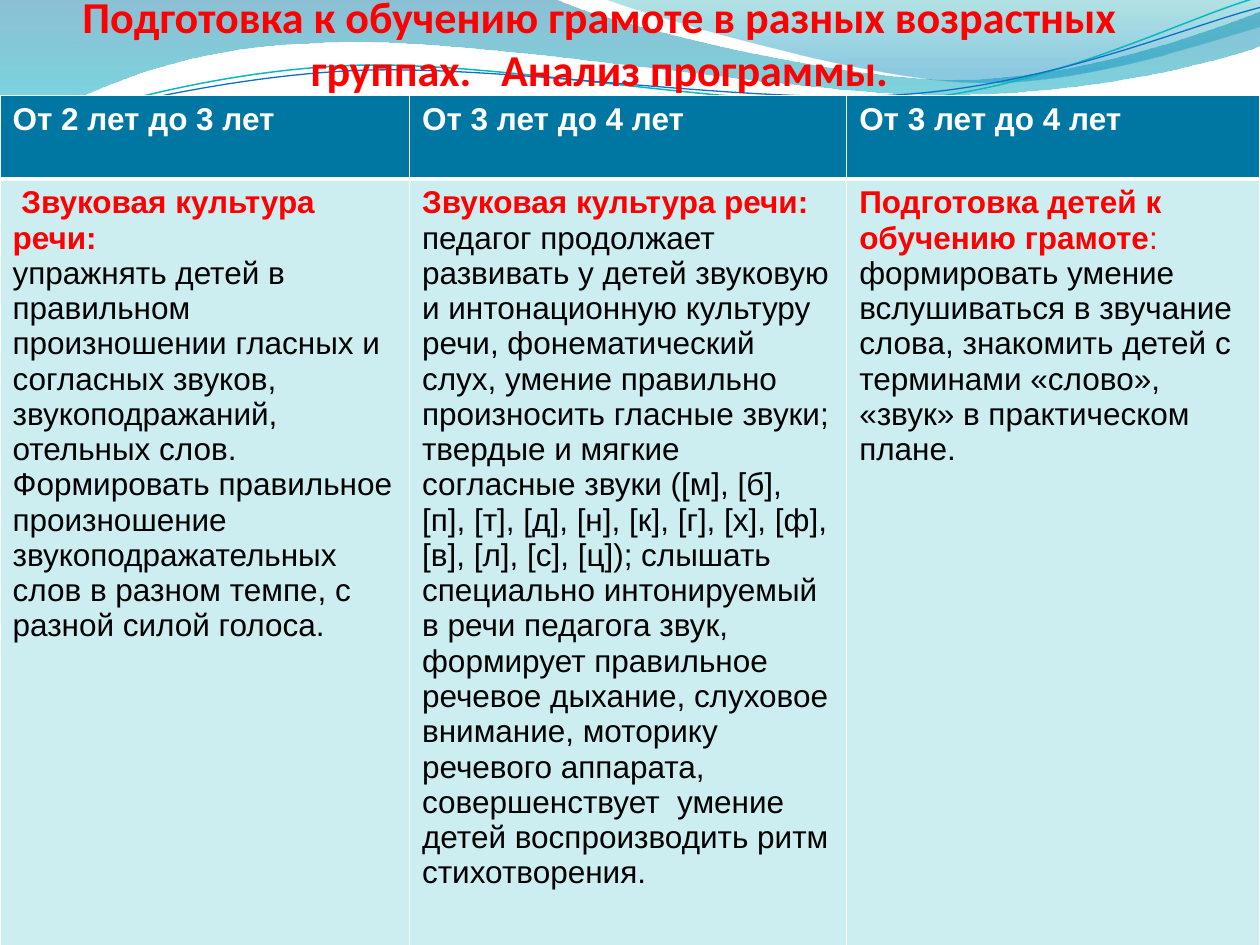
from math import cos, radians, sin

from lxml.etree import SubElement
from pptx import Presentation
from pptx.dml.color import RGBColor
from pptx.enum.text import MSO_ANCHOR, PP_ALIGN
from pptx.oxml.ns import qn
from pptx.util import Inches, Pt

WIDTH, HEIGHT = 10, 7.5
TABLE_TOP = 0.76
COLUMNS = [3.25, 3.47, 3.28]
ROWS = [0.66, 6.08]
TILT = 2.7  # degrees by which the thin lines lean to the left
COLORS = {
    "white": "FFFFFF", "black": "000000", "red": "FF0000",
    "header": "0076A3", "body": "CCEEF1",
    "wave_blue": "0074A1", "wave_cyan": "00C6CF",
    "crest_teal": "00A1A9", "crest_blue": "008BBF",
    "line_teal": "0AB8BF", "line_blue": "0F6FC6",
}

TITLE = "Подготовка к обучению грамоте в разных возрастных группах.   Анализ программы."
HEADERS = ["От 2 лет до 3 лет", "От 3 лет до 4 лет", "От 3 лет до 4 лет"]
# Each cell is a list of paragraphs, each paragraph a list of (text, colour, bold)
BODY = [
    [[(" ", "black", False), ("Звуковая культура речи:", "red", True)],
     [("упражнять детей в правильном произношении гласных и согласных звуков, "
       "звукоподражаний, отельных слов. Формировать правильное произношение "
       "звукоподражательных слов в разном темпе, с разной силой голоса.",
       "black", False)]],
    [[("Звуковая культура речи:", "red", True)],
     [("педагог продолжает развивать у детей звуковую и интонационную культуру "
       "речи, фонематический слух, умение правильно произносить гласные звуки; "
       "твердые и мягкие согласные звуки ([м], [б], [п], [т], [д], [н], [к], [г], "
       "[х], [ф], [в], [л], [с], [ц]); слышать специально интонируемый в речи "
       "педагога звук, формирует правильное речевое дыхание, слуховое внимание, "
       "моторику речевого аппарата, совершенствует  умение детей воспроизводить "
       "ритм стихотворения.", "black", False)]],
    [[("Подготовка детей к обучению грамоте", "red", True), (":", "red", False)],
     [("формировать умение вслушиваться в звучание слова, знакомить детей с "
       "терминами «слово», «звук» в практическом плане.", "black", False)]],
]

# A chain is a start point, then two handles and an end for each curved piece
WAVE_TOP = [(4.4, -0.01), (4.76, 0.17), (6.64, 0.63), (7.58, 0.63),
            (8.53, 0.63), (9.58, 0.26), (10, 0.09)]
WAVE_BOTTOM = [(10.01, 0.36), (9.83, 0.44), (8.7, 0.76), (7.46, 0.75),
               (6.22, 0.75), (3.82, 0.28), (2.57, 0.34),
               (1.29, 0.36), (0.46, 0.83), (-0.01, 1.13)]
CREST = [(4.79, -0.01), (5.09, 0.11), (6.82, 0.62), (7.69, 0.65),
         (8.56, 0.69), (9.61, 0.32), (10, 0.21)]
TEAL_LINE = [(0, 1.11), (0.48, 0.93), (1.58, 0.57), (2.77, 0.52),
             (3.95, 0.47), (5.93, 0.89), (7.13, 0.8),
             (8.33, 0.71), (9.38, 0.15), (9.98, -0.02)]
BLUE_LINE = [(0, 1.04), (0.47, 0.96), (1.64, 0.61), (2.83, 0.56),
             (4.03, 0.51), (5.97, 0.84), (7.17, 0.75),
             (8.36, 0.67), (9.41, 0.21), (10, 0.06)]


def rgb(name):
    return RGBColor.from_string(COLORS[name])


def add_outline(page, chains, close):
    """Freeform of curved chains, joined by straight lines."""
    start, *rest = [(Inches(x), Inches(y)) for chain in chains for x, y in chain]
    builder = page.shapes.build_freeform(*start, scale=1.0)
    builder.add_line_segments(rest, close=close)
    shape = builder.convert_to_shape()
    shape.shadow.inherit = False

    # Turn each run of handle, handle, end into one Bezier piece
    outline = next(shape._element.iter(qn("a:path")))
    nodes = list(outline)
    offset = 0
    for chain in chains:
        for first in range(offset + 1, offset + len(chain), 3):
            piece = nodes[first:first + 3]
            curve = outline.makeelement(qn("a:cubicBezTo"), {})
            piece[0].addprevious(curve)
            for node in piece:
                curve.append(node[0])
                outline.remove(node)
        offset += len(chain)
    return shape


def add_wave(page, chains, stops):
    """Closed wave, shaded downwards; stops are (position, colour, opacity)."""
    wave = add_outline(page, chains, True)
    wave.line.fill.background()
    wave.fill.gradient()
    gradient = wave._element.spPr.find(qn("a:gradFill"))
    for child in list(gradient):
        gradient.remove(child)
    stop_list = SubElement(gradient, qn("a:gsLst"))
    for position, name, opacity in stops:
        stop = SubElement(stop_list, qn("a:gs"), pos=str(position * 1000))
        color = SubElement(stop, qn("a:srgbClr"), val=COLORS[name])
        SubElement(color, qn("a:alpha"), val=str(opacity * 1000))
    SubElement(gradient, qn("a:lin"), ang="5400000", scaled="0")


def add_tilted_line(page, chain, center, name, width):
    """Level the chain around its center, then tilt the finished shape."""
    middle_x, middle_y = center
    cosine, sine = cos(radians(TILT)), sin(radians(TILT))
    level = [(middle_x + (x - middle_x) * cosine - (y - middle_y) * sine,
              middle_y + (x - middle_x) * sine + (y - middle_y) * cosine)
             for x, y in chain]
    curve = add_outline(page, [level], False)
    curve.rotation = 360 - TILT
    curve.fill.background()
    curve.line.color.rgb = rgb(name)
    curve.line.width = Pt(width)


def add_span(para, text, name, bold, size, font):
    span = para.add_run()
    span.text = text
    span.font.name = font
    span.font.size = Pt(size)
    span.font.bold = bold
    span.font.color.rgb = rgb(name)


def add_title(page):
    box = page.shapes.add_textbox(Inches(0.23), 0, Inches(9.06), Inches(TABLE_TOP))
    frame = box.text_frame
    frame.word_wrap = True
    frame.vertical_anchor = MSO_ANCHOR.BOTTOM
    frame.margin_left = frame.margin_right = frame.margin_bottom = 0
    frame.margin_top = Inches(0.05)
    para = frame.paragraphs[0]
    para.alignment = PP_ALIGN.CENTER
    add_span(para, TITLE, "red", True, 25.2, "Calibri")


def set_borders(cell, top, bottom):
    properties = cell._tc.get_or_add_tcPr()
    for index, (side, width) in enumerate(
            [("lnL", 1), ("lnR", 1), ("lnT", top), ("lnB", bottom)]):
        line = properties.makeelement(qn(f"a:{side}"), {"w": str(Pt(width))})
        fill = SubElement(line, qn("a:solidFill"))
        SubElement(fill, qn("a:srgbClr"), val=COLORS["white"])
        properties.insert(index, line)


def fill_cell(cell, paragraphs, fill, top, bottom):
    cell.fill.solid()
    cell.fill.fore_color.rgb = rgb(fill)
    set_borders(cell, top, bottom)
    frame = cell.text_frame
    for index, spans in enumerate(paragraphs):
        para = frame.add_paragraph() if index else frame.paragraphs[0]
        for text, name, bold in spans:
            add_span(para, text, name, bold, 18, "Arial")


def add_program_table(page):
    table = page.shapes.add_table(
        len(ROWS), len(COLUMNS), 0, Inches(TABLE_TOP),
        Inches(sum(COLUMNS)), Inches(sum(ROWS))).table
    for row, height in zip(table.rows, ROWS):
        row.height = Inches(height)
    for index, width in enumerate(COLUMNS):
        table.columns[index].width = Inches(width)
        header = [[(HEADERS[index], "white", True)]]
        fill_cell(table.cell(0, index), header, "header", 1, 3)
        fill_cell(table.cell(1, index), BODY[index], "body", 3, 1)


def main():
    deck = Presentation()
    deck.slide_width, deck.slide_height = Inches(WIDTH), Inches(HEIGHT)
    page = deck.slides.add_slide(deck.slide_layouts[6])

    # Waves along the top edge
    add_wave(page, [[(0, 0)], WAVE_TOP, WAVE_BOTTOM],
             [(0, "wave_blue", 45), (100, "wave_cyan", 55)])
    add_wave(page, [CREST, [(WIDTH, 0)]],
             [(0, "crest_teal", 30), (80, "crest_blue", 45)])
    add_tilted_line(page, TEAL_LINE, (4.99, 0.58), "line_teal", 0.85)
    add_tilted_line(page, BLUE_LINE, (5, 0.59), "line_blue", 0.75)

    # Heading and table
    add_title(page)
    add_program_table(page)
    deck.save("out.pptx")


if __name__ == "__main__":
    main()
